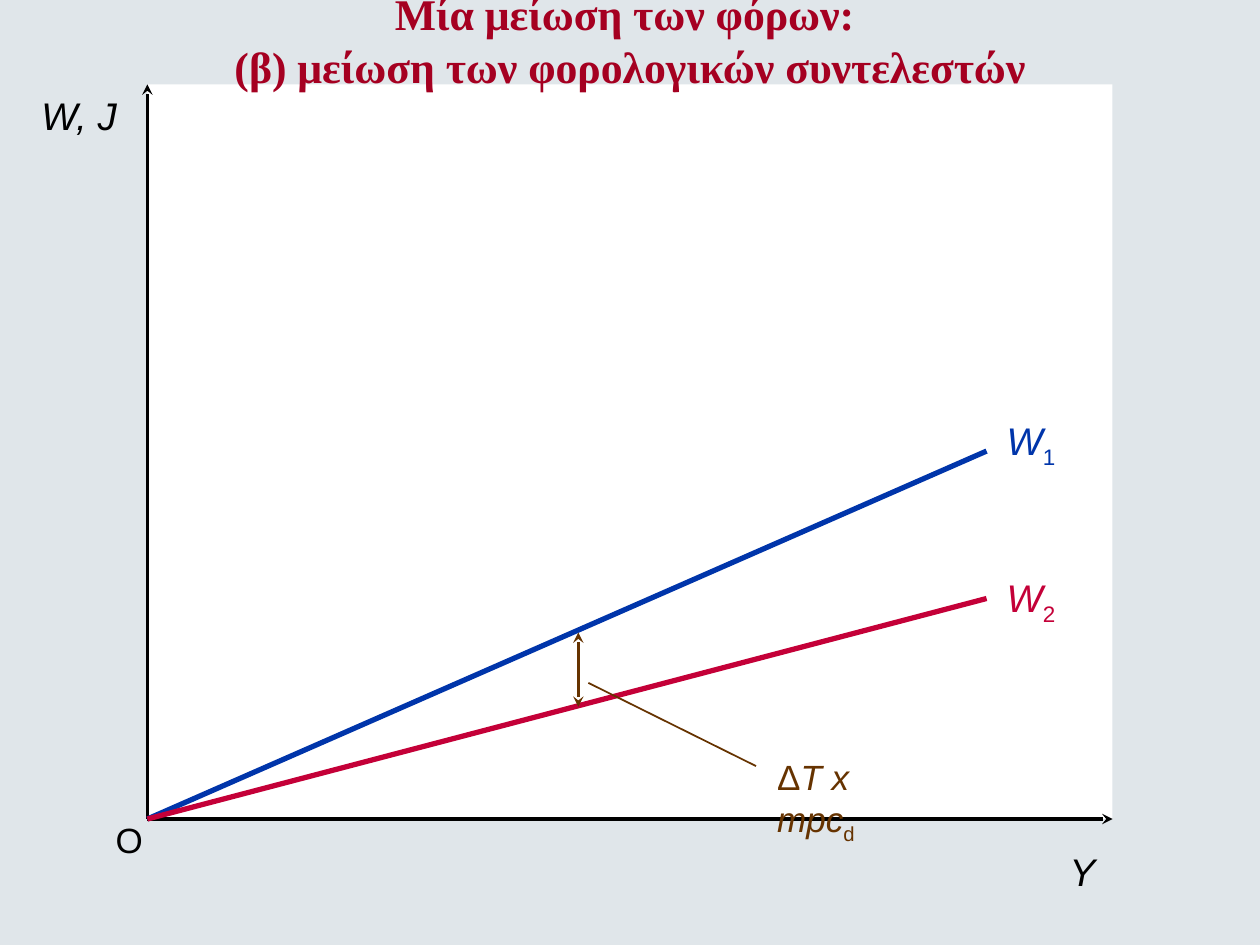
from lxml import etree
from pptx import Presentation
from pptx import util as u
from pptx.dml.color import RGBColor
from pptx.enum import shapes, text
from pptx.oxml.ns import qn

COLOURS = {
    "background": "E0E6EA", "plot": "FFFFFF", "axis": "000000",
    "w1": "0035AA", "w2": "C40038", "gap": "663300", "title": "A50021",
}


def rgb(name):
    return RGBColor.from_string(COLOURS[name])


def add_line(slide, start, end, colour, width, head=False, tail=False):
    line = slide.shapes.add_connector(
        shapes.MSO_CONNECTOR.STRAIGHT, *[u.Inches(v) for v in start + end])
    line.line.color.rgb = rgb(colour)
    line.line.width = u.Pt(width)
    outline = line.line._get_or_add_ln()
    for tag, wanted in (("a:headEnd", head), ("a:tailEnd", tail)):
        if wanted:
            etree.SubElement(outline, qn(tag), type="stealth")
    etree.SubElement(line._element.spPr, qn("a:effectLst"))


def add_label(slide, box, runs, colour, size=22, wrap=False):
    label = slide.shapes.add_textbox(*[u.Inches(v) for v in box])
    frame = label.text_frame
    frame.word_wrap = wrap
    for wording, style in runs:
        run = frame.paragraphs[0].add_run()
        run.text = wording
        font = run.font
        font.name, font.size = "Arial", u.Pt(size)
        font.italic = style == "italic"
        font.color.rgb = rgb(colour)
        if style == "subscript":
            font._element.set("baseline", "-25000")


def add_title(slide, box, lines):
    title = slide.shapes.title
    title.left, title.top, title.width, title.height = [u.Inches(v) for v in box]
    frame = title.text_frame
    frame.word_wrap = True
    frame.auto_size = text.MSO_AUTO_SIZE.NONE
    frame.vertical_anchor = text.MSO_ANCHOR.MIDDLE
    paragraph = frame.paragraphs[0]
    paragraph.alignment = text.PP_ALIGN.CENTER
    for index, wording in enumerate(lines):
        if index:
            paragraph.add_line_break()
        run = paragraph.add_run()
        run.text = wording
        font = run.font
        font.size, font.bold = u.Pt(25), True
        font.color.rgb = rgb("title")
        effects = etree.SubElement(font._element, qn("a:effectLst"))
        shadow = etree.SubElement(
            effects, qn("a:outerShdw"), dist="25400", dir="2700000")
        etree.SubElement(shadow, qn("a:srgbClr"), val=COLOURS["axis"])
        font.name = "Times New Roman"
    slide.shapes._spTree.append(title._element)


def add_diagram(slide, box):
    left, top, width, height = box
    right, bottom = left + width, top + height
    origin = (left, bottom)

    plot = slide.shapes.add_shape(
        shapes.MSO_SHAPE.RECTANGLE, *[u.Inches(v) for v in box])
    plot.shadow.inherit = False
    plot.fill.solid()
    plot.fill.fore_color.rgb = rgb("plot")
    plot.line.fill.background()

    add_line(slide, (left, top), origin, "axis", 2, head=True)
    add_line(slide, origin, (right, bottom), "axis", 2, tail=True)
    add_label(slide, (left - 0.35, bottom - 0.05, 0.42, 0.43),
              [("O", "plain")], "axis", size=20)
    add_label(slide, (left - 0.94, top + 0.01, 0.81, 0.47),
              [("W, J", "italic")], "axis")
    add_label(slide, (right - 0.44, bottom + 0.18, 0.4, 0.47),
              [("Y", "italic")], "axis")

    curve_end = right - 1
    for number, rise, label_rise in (("1", 2.92, 3.24), ("2", 1.75, 1.99)):
        colour = "w" + number
        add_line(slide, origin, (curve_end, bottom - rise), colour, 3)
        add_label(slide, (curve_end + 0.06, bottom - label_rise, 0.61, 0.47),
                  [("W", "italic"), (number, "subscript")], colour)

    gap = left + 3.42
    add_line(slide, (gap, bottom - 1.48), (gap, bottom - 0.89), "gap", 2,
             head=True, tail=True)
    add_line(slide, (gap + 0.08, bottom - 1.08), (gap + 1.41, bottom - 0.42),
             "gap", 1)
    add_label(slide, (gap + 1.48, bottom - 0.55, 1.4, 0.43),
              [("Δ", "plain"), ("T x mpc", "italic"), ("d", "subscript")],
              "gap", size=20, wrap=True)


def main():
    deck = Presentation()
    deck.slide_width, deck.slide_height = u.Inches(10), u.Inches(7.5)
    slide = deck.slides.add_slide(deck.slide_layouts[5])
    slide.background.fill.solid()
    slide.background.fill.fore_color.rgb = rgb("background")
    add_diagram(slide, (1.17, 0.67, 7.66, 5.83))
    add_title(slide, (0, 0, 10, 0.63),
              ["Μία μείωση των φόρων: ", "(β) μείωση των φορολογικών συντελεστών"])
    deck.save("out.pptx")


if __name__ == "__main__":
    main()
